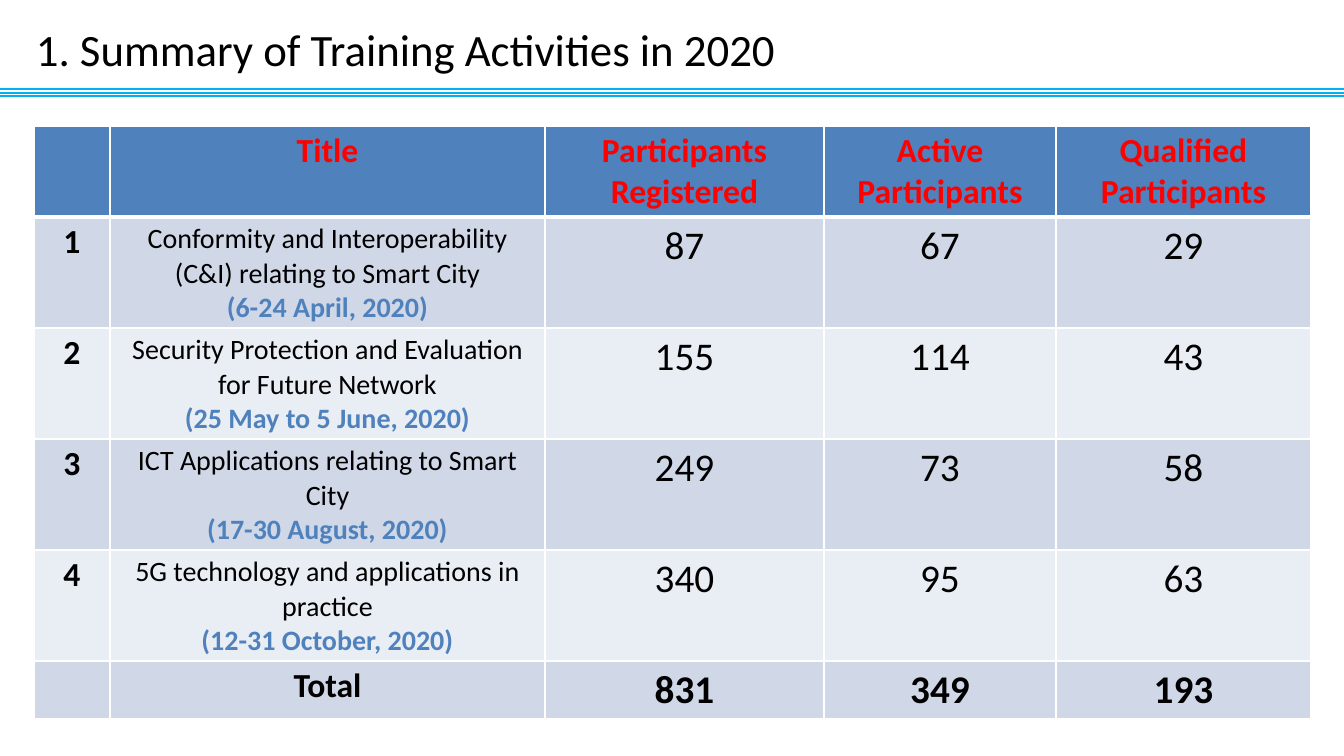
from dataclasses import dataclass

from lxml import etree
from pptx import Presentation
from pptx.dml.color import RGBColor
from pptx.enum.shapes import MSO_CONNECTOR
from pptx.enum.text import MSO_AUTO_SIZE, PP_ALIGN
from pptx.oxml.ns import qn
from pptx.util import Emu, Pt

CENTER = PP_ALIGN.CENTER
STRAIGHT = MSO_CONNECTOR.STRAIGHT
GROW = MSO_AUTO_SIZE.SHAPE_TO_FIT_TEXT
PX_PER_INCH = 100.8
SLIDE_W, SLIDE_H = 1344, 756


@dataclass(frozen=True)
class Theme:
    font: str = "Calibri"
    text: str = "000000"
    heading: str = "FF0000"
    accent: str = "4F81BD"
    rule: str = "00B0F0"
    border: str = "FFFFFF"
    bands: tuple = ("D0D8E8", "E9EDF4")
    title_size: int = 32
    number_size: int = 28
    label_size: int = 24
    course_size: int = 20


THEME = Theme()

HEADINGS = ["", "Title", "Participants Registered", "Active Participants",
            "Qualified Participants"]
COURSES = [
    ("Conformity and Interoperability (C&I) relating to Smart City",
     "(6-24 April, 2020)", (87, 67, 29)),
    ("Security Protection and Evaluation for Future Network",
     "(25 May to 5 June, 2020)", (155, 114, 43)),
    ("ICT Applications relating to Smart City",
     "(17-30 August, 2020)", (249, 73, 58)),
    ("5G technology and applications in practice",
     "(12-31 October, 2020)", (340, 95, 63)),
]
COLUMN_WIDTHS = [76, 435, 279, 232, 255]
HEADER_H, COURSE_H, TOTAL_H = 91, 111, 57


def px(length):
    return Emu(round(length * 914400 / PX_PER_INCH))


def add_run(paragraph, text, size, color=THEME.text, bold=False):
    run = paragraph.add_run()
    run.text = text
    run.font.name = THEME.font
    run.font.size = Pt(size)
    run.font.bold = bold
    run.font.color.rgb = RGBColor.from_string(color)


def add_title(slide, left, top, width, height):
    box = slide.shapes.add_textbox(px(left), px(top), px(width), px(height))
    frame = box.text_frame
    frame.word_wrap = True
    frame.auto_size = GROW
    add_run(frame.paragraphs[0], "1. Summary of Training Activities in 2020",
            THEME.title_size)


def add_header_rules(slide, left, top, width):
    """Draw the triple rule: a thick line between two thin ones."""
    for offset, weight in ((0, 1), (4, 2), (7, 1)):
        y = px(top + offset)
        rule = slide.shapes.add_connector(STRAIGHT, px(left), y, px(left + width), y)
        rule.line.color.rgb = RGBColor.from_string(THEME.rule)
        rule.line.width = Pt(weight)
        etree.SubElement(rule._element.spPr, qn("a:effectLst"))


def set_borders(cell, top, bottom):
    """Give the cell border lines; top and bottom are weights in points."""
    weights = {"lnL": 1, "lnR": 1, "lnT": top, "lnB": bottom}
    properties = cell._tc.get_or_add_tcPr()
    for position, (side, weight) in enumerate(weights.items()):
        line = etree.Element(qn(f"a:{side}"), w=str(Pt(weight)))
        fill = etree.SubElement(line, qn("a:solidFill"))
        etree.SubElement(fill, qn("a:srgbClr"), val=THEME.border)
        properties.insert(position, line)


def fill_cell(cell, lines):
    """Write one centred paragraph per (text, size, color, bold) line."""
    frame = cell.text_frame
    for index, line in enumerate(lines):
        paragraph = frame.add_paragraph() if index else frame.paragraphs[0]
        paragraph.alignment = CENTER
        if line[0]:
            add_run(paragraph, *line)


def label(text, color=THEME.text):
    return [(text, THEME.label_size, color, True)]


def figures(values, bold=False):
    return [[(str(value), THEME.number_size, THEME.text, bold)] for value in values]


def summary_rows():
    """Return the lines of every cell, row by row, with the totals last."""
    rows = [[label(heading, THEME.heading) for heading in HEADINGS]]
    for number, (course, dates, counts) in enumerate(COURSES, 1):
        title = [(course, THEME.course_size, THEME.text, False),
                 (dates, THEME.course_size, THEME.accent, True)]
        rows.append([label(str(number)), title, *figures(counts)])
    totals = [sum(column) for column in zip(*(counts for _, _, counts in COURSES))]
    rows.append([label(""), label("Total"), *figures(totals, bold=True)])
    return rows


def add_summary_table(slide, left, top):
    rows = summary_rows()
    heights = [HEADER_H, *[COURSE_H] * len(COURSES), TOTAL_H]
    table = slide.shapes.add_table(
        len(rows), len(COLUMN_WIDTHS), px(left), px(top),
        px(sum(COLUMN_WIDTHS)), px(sum(heights))).table
    table.first_row = table.horz_banding = False
    for column, width in zip(table.columns, COLUMN_WIDTHS):
        column.width = px(width)
    for r, (cells, height) in enumerate(zip(rows, heights)):
        table.rows[r].height = px(height)
        color = THEME.bands[(r - 1) % 2] if r else THEME.accent
        for c, lines in enumerate(cells):
            cell = table.cell(r, c)
            cell.fill.solid()
            cell.fill.fore_color.rgb = RGBColor.from_string(color)
            set_borders(cell, top=3 if r == 1 else 1, bottom=3 if r == 0 else 1)
            fill_cell(cell, lines)


def main():
    deck = Presentation()
    deck.slide_width, deck.slide_height = px(SLIDE_W), px(SLIDE_H)
    slide = deck.slides.add_slide(deck.slide_layouts[6])
    add_header_rules(slide, 0, 89, SLIDE_W)
    add_title(slide, 26, 17, 965, 64)
    add_summary_table(slide, 34, 126)
    deck.save("out.pptx")


if __name__ == "__main__":
    main()
